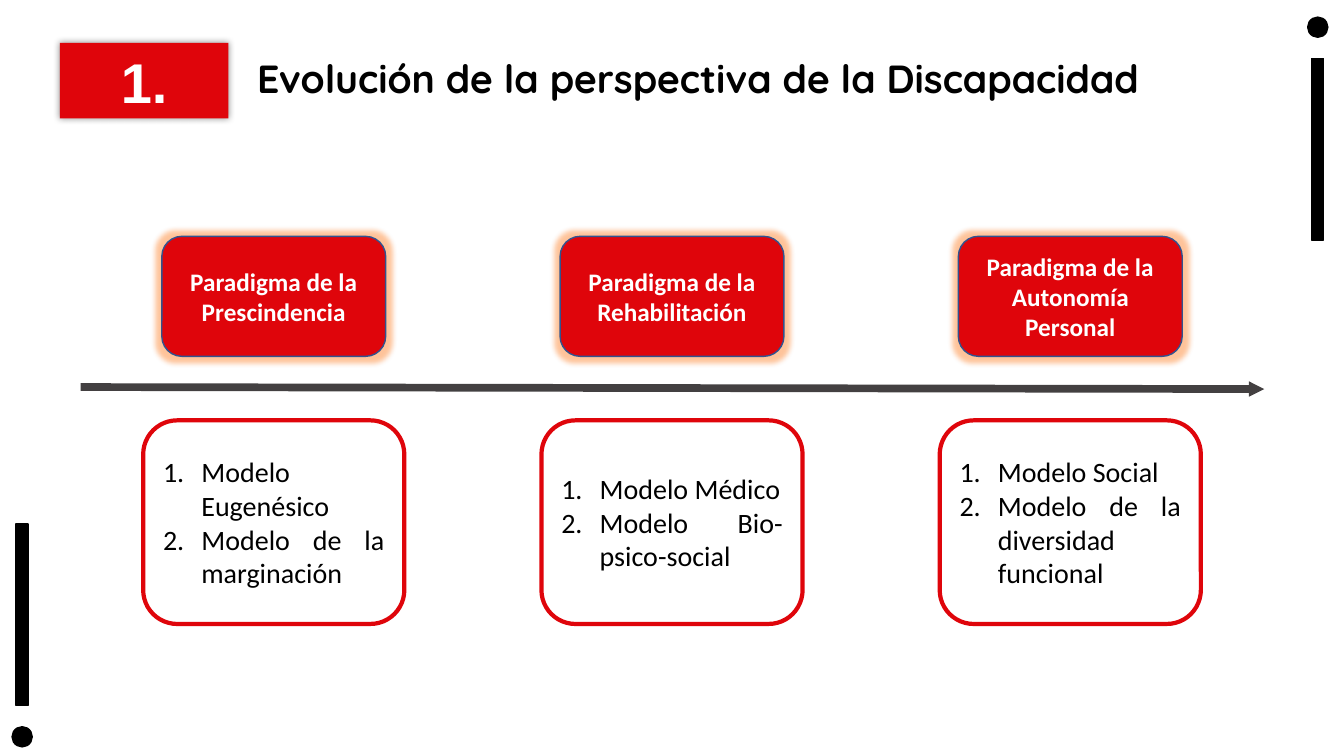
from lxml.etree import SubElement
from pptx import Presentation
from pptx.dml.color import RGBColor
from pptx.enum.shapes import MSO_CONNECTOR, MSO_SHAPE
from pptx.enum.text import MSO_ANCHOR, PP_ALIGN
from pptx.oxml.ns import qn
from pptx.util import Inches, Pt

RED, BLACK, WHITE = "DF050B", "000000", "FFFFFF"
WIDTH, HEIGHT = 13.33, 7.5


def color(hex_text):
    return RGBColor.from_string(hex_text)


def add_block(kind, center_x, center_y, width, height, fill, line=None, line_width=1):
    """Add a filled shape around a center point; without a line color it has no outline."""
    block = slide.shapes.add_shape(
        kind, Inches(center_x - width / 2), Inches(center_y - height / 2),
        Inches(width), Inches(height))
    block.shadow.inherit = False
    block.fill.solid()
    block.fill.fore_color.rgb = color(fill)
    if line:
        block.line.color.rgb = color(line)
        block.line.width = Pt(line_width)
    else:
        block.line.fill.background()
    block.text_frame.word_wrap = True
    block.text_frame.vertical_anchor = MSO_ANCHOR.MIDDLE
    return block


presentation = Presentation()
presentation.slide_width = Inches(WIDTH)
presentation.slide_height = Inches(HEIGHT)
slide = presentation.slides.add_slide(presentation.slide_layouts[5])

# Corner marks: a dot with a bar pointing towards the middle of the slide
for mark_x, dot_y, direction in [(13.07, 0.27, 1), (0.22, 7.31, -1)]:
    add_block(MSO_SHAPE.OVAL, mark_x, dot_y, 0.2, 0.2, BLACK, BLACK)
    add_block(MSO_SHAPE.RECTANGLE, mark_x, dot_y + direction * 1.21, 0.12, 1.8, BLACK, BLACK)

# Title and section number
title = slide.shapes.title
title.left, title.top = Inches(2.45), Inches(0.29)
title.width, title.height = Inches(10.39), Inches(1.02)
title.text_frame.vertical_anchor = MSO_ANCHOR.MIDDLE
title_line = title.text_frame.paragraphs[0]
title_line.alignment = PP_ALIGN.LEFT
title_line.line_spacing = 0.9
heading = title_line.add_run()
heading.text = "Evolución de la perspectiva de la Discapacidad"
heading.font.name, heading.font.size, heading.font.bold = "Quicksand", Pt(28), True
heading.font.color.rgb = color(BLACK)

section = add_block(MSO_SHAPE.RECTANGLE, 1.43, 0.8, 1.67, 0.75, RED)
section_line = section.text_frame.paragraphs[0]
section_line.alignment = PP_ALIGN.CENTER
number = section_line.add_run()
number.text = "1."
number.font.name, number.font.size, number.font.bold = "Arial", Pt(40), True
number.font.color.rgb = color(WHITE)
section_effects = section._element.spPr.find(qn("a:effectLst"))
shadow = SubElement(section_effects, qn("a:outerShdw"), blurRad=str(Pt(5)),
                    dist="0", dir="0", algn="ctr", rotWithShape="0")
shadow_color = SubElement(shadow, qn("a:srgbClr"), val=BLACK)
SubElement(shadow_color, qn("a:alpha"), val="40000")

# Paradigms above the timeline, their models below it
paradigms = [
    ("Paradigma de la Prescindencia", ["Modelo Eugenésico", "Modelo de la marginación"]),
    ("Paradigma de la Rehabilitación", ["Modelo Médico", "Modelo Bio-psico-social"]),
    ("Paradigma de la Autonomía Personal",
     ["Modelo Social", "Modelo de la diversidad funcional"]),
]
COLUMN_PITCH = 3.95
for column, (paradigm, models) in enumerate(paradigms):
    column_x = WIDTH / 2 + (column - 1) * COLUMN_PITCH

    paradigm_box = add_block(MSO_SHAPE.ROUNDED_RECTANGLE, column_x, 2.94, 2.22, 1.19,
                             RED, "31538F")
    box_effects = paradigm_box._element.spPr.find(qn("a:effectLst"))
    glow = SubElement(box_effects, qn("a:glow"), rad=str(Pt(8)))
    glow_color = SubElement(glow, qn("a:srgbClr"), val="FF6B00")
    SubElement(glow_color, qn("a:alpha"), val="40000")
    paradigm_line = paradigm_box.text_frame.paragraphs[0]
    paradigm_line.alignment = PP_ALIGN.CENTER
    label = paradigm_line.add_run()
    label.text = paradigm
    label.font.name, label.font.size, label.font.bold = "Calibri", Pt(18), True
    label.font.color.rgb = color(WHITE)

    models_box = add_block(MSO_SHAPE.ROUNDED_RECTANGLE, column_x, 5.18, 2.59, 2.02,
                           WHITE, RED, 3)
    for index, model in enumerate(models):
        frame = models_box.text_frame
        model_line = frame.add_paragraph() if index else frame.paragraphs[0]
        model_line.alignment = PP_ALIGN.JUSTIFY
        properties = model_line._p.get_or_add_pPr()
        properties.set("marL", str(Inches(0.38)))
        properties.set("indent", str(-Inches(0.38)))
        bullet_color = SubElement(properties, qn("a:buClr"))
        SubElement(bullet_color, qn("a:srgbClr"), val=BLACK)
        SubElement(properties, qn("a:buFont"), typeface="+mj-lt")
        SubElement(properties, qn("a:buAutoNum"), type="arabicPeriod")
        entry = model_line.add_run()
        entry.text = model
        entry.font.name, entry.font.size = "Calibri", Pt(20)
        entry.font.color.rgb = color(BLACK)

timeline = slide.shapes.add_connector(
    MSO_CONNECTOR.STRAIGHT, Inches(0.8), Inches(3.84), Inches(12.54), Inches(3.86))
timeline.line.color.rgb = color("434041")
timeline.line.width = Pt(5.5)
SubElement(timeline.line._get_or_add_ln(), qn("a:tailEnd"), type="triangle", w="sm", len="sm")
SubElement(timeline._element.spPr, qn("a:effectLst"))

presentation.save("out.pptx")
